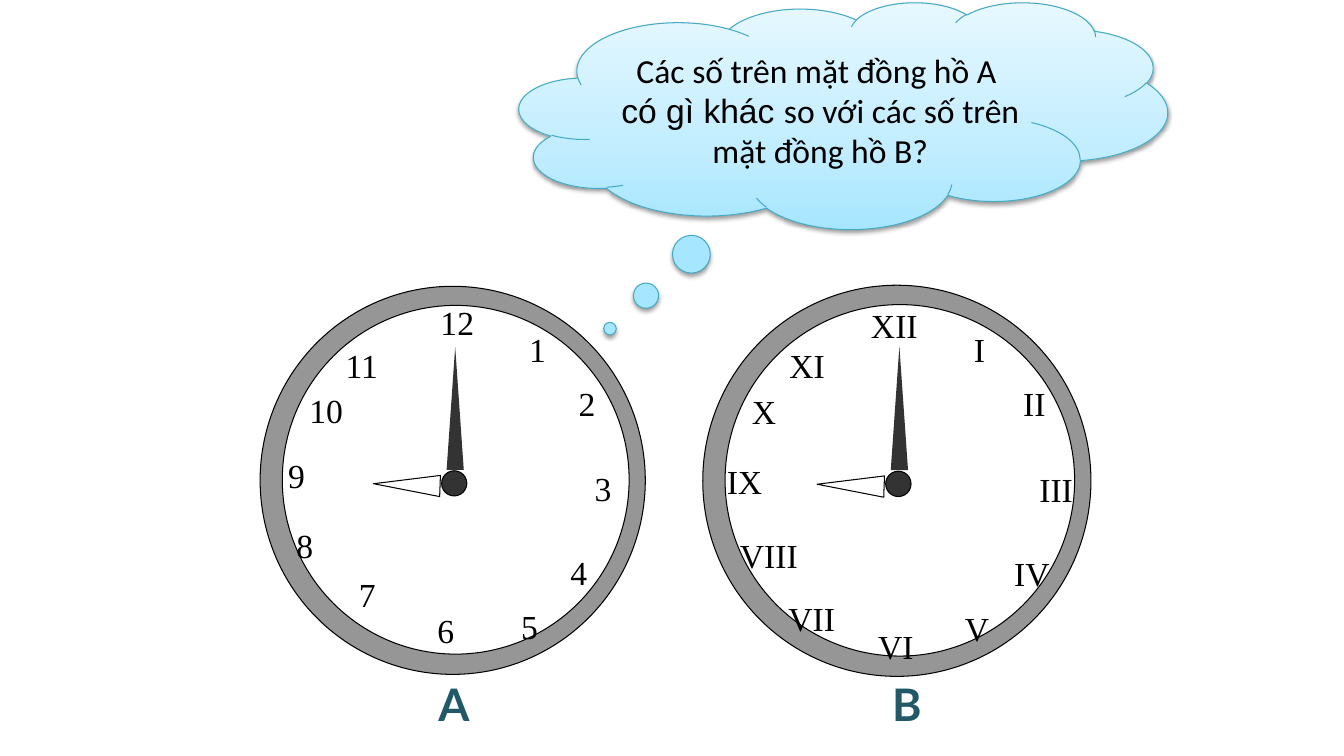
"""Build a slide comparing an Arabic-numeral clock with a Roman-numeral clock."""
from copy import deepcopy

from lxml import etree
from pptx import Presentation
from pptx.dml.color import RGBColor
from pptx.enum.shapes import MSO_SHAPE
from pptx.enum.text import MSO_ANCHOR, PP_ALIGN
from pptx.oxml.ns import qn
from pptx.util import Inches, Pt

OVAL, TRIANGLE, CLOUD = MSO_SHAPE.OVAL, MSO_SHAPE.ISOSCELES_TRIANGLE, MSO_SHAPE.CLOUD_CALLOUT
MIDDLE, CENTER = MSO_ANCHOR.MIDDLE, PP_ALIGN.CENTER

BLACK = RGBColor(0x00, 0x00, 0x00)
WHITE = RGBColor(0xFF, 0xFF, 0xFF)
RIM_GRAY = RGBColor(0x96, 0x96, 0x96)
HAND_GRAY = RGBColor(0x33, 0x33, 0x33)
LABEL_TEAL = RGBColor(0x21, 0x59, 0x68)
CLOUD_LINE = RGBColor(0x46, 0xAA, 0xC5)
CLOUD_STOPS = [
    (0, RGBColor(0xA7, 0xE6, 0xFF)),
    (0.35, RGBColor(0xC1, 0xED, 0xFF)),
    (1, RGBColor(0xE7, 0xF8, 0xFF)),
]

RIM_WIDTH = 3.82
CLOCK_PARTS = [
    (OVAL, 0, 0, RIM_WIDTH, 3.85, 0, RIM_GRAY, True),
    (OVAL, 0.22, 0.19, 3.44, 3.46, 0, WHITE, True),
    (OVAL, 1.8, 1.83, 0.25, 0.25, 270, HAND_GRAY, True),
    (TRIANGLE, 1.35, 1.64, 0.21, 0.66, 272, WHITE, True),
    (TRIANGLE, 1.85, 0.6, 0.17, 1.22, 0, HAND_GRAY, False),
]
CLOCKS = [
    (6.97, 2.83, 3.85, [
        ("XII", 8.54, 2.92), ("I", 9.56, 3.15), ("II", 10.05, 3.69), ("III", 10.21, 4.54),
        ("IV", 9.96, 5.38), ("V", 9.47, 5.92), ("VI", 8.61, 6.1), ("VII", 7.72, 5.82),
        ("VIII", 7.24, 5.2), ("IX", 7.11, 4.46), ("X", 7.36, 3.77), ("XI", 7.73, 3.31),
    ]),
    (2.58, 2.84, RIM_WIDTH, [
        ("12", 4.27, 2.89), ("1", 5.15, 3.15), ("2", 5.64, 3.69), ("3", 5.8, 4.53),
        ("4", 5.56, 5.37), ("5", 5.07, 5.9), ("6", 4.24, 5.94), ("7", 3.46, 5.58),
        ("8", 2.84, 5.1), ("9", 2.76, 4.4), ("10", 2.97, 3.76), ("11", 3.33, 3.31),
    ]),
]
SPACE_BEFORE = {1: 2, 2: 3}
NUMERAL_FORMAT = {"name": "Times New Roman", "size": Pt(24)}
LABEL_FORMAT = {"name": "Lato", "size": Pt(32), "bold": True}
QUESTION_START = "Các số trên mặt đồng hồ A "
QUESTION_REST = [
    ("có gì khác ", "Arial"),
    ("so với các số trên mặt đồng hồ B?", "Calibri"),
]


def add_span(para, text, color, font_format):
    span = para.add_run()
    span.text = text
    span.font.color.rgb = color
    for key, value in font_format.items():
        setattr(span.font, key, value)


def add_text(shapes, text, position, color, font_format):
    box = shapes.add_textbox(*[Inches(length) for length in position])
    box.text_frame.word_wrap = True
    para = box.text_frame.paragraphs[0]
    add_span(para, text, color, font_format)
    return para


deck = Presentation()
deck.slide_width, deck.slide_height = Inches(13.33), Inches(7.5)
page = deck.slides.add_slide(deck.slide_layouts[6])

for clock_left, clock_top, rim_width, numerals in CLOCKS:
    scale = rim_width / RIM_WIDTH
    clock = page.shapes.add_group_shape()
    for kind, left, top, width, height, rotation, color, outlined in CLOCK_PARTS:
        part = clock.shapes.add_shape(
            kind,
            Inches(clock_left + left * scale), Inches(clock_top + top * scale),
            Inches(width * scale), Inches(height * scale),
        )
        part.rotation = rotation
        part.shadow.inherit = False
        part.fill.solid()
        part.fill.fore_color.rgb = color
        if outlined:
            part.line.color.rgb = BLACK
            part.line.width = Pt(0.75)
        else:
            part.line.fill.background()
    for hour, (numeral, left, top) in enumerate(numerals):
        para = add_text(clock.shapes, numeral, (left, top, 1.45, 1.06), BLACK, NUMERAL_FORMAT)
        para.line_spacing = 1.15
        para.space_before = Pt(SPACE_BEFORE.get(hour, 0))
        para.space_after = Pt(10)

cloud = page.shapes.add_shape(CLOUD, Inches(5.15), Inches(0.02), Inches(6.43), Inches(2.25))
cloud.adjustments[0], cloud.adjustments[1] = -0.36, 0.94
cloud.line.color.rgb = CLOUD_LINE
cloud.line.width = Pt(0.75)
cloud.fill.gradient()
cloud.fill.gradient_angle = 90
stop_list = cloud._element.spPr.find(".//" + qn("a:gsLst"))
stop_list.append(deepcopy(stop_list[0]))
for stop, (position, color) in zip(cloud.fill.gradient_stops, CLOUD_STOPS):
    stop.position = position
    stop.color.rgb = color

cloud.shadow.inherit = False
effects = cloud._element.spPr.find(qn("a:effectLst"))
shadow = etree.SubElement(
    effects, qn("a:outerShdw"),
    blurRad=str(Pt(3.1)), dist=str(Pt(1.6)), dir="5400000", rotWithShape="0",
)
shadow_color = etree.SubElement(shadow, qn("a:srgbClr"), val=str(BLACK))
etree.SubElement(shadow_color, qn("a:alpha"), val="38000")

cloud.text_frame.word_wrap = True
cloud.text_frame.vertical_anchor = MIDDLE
question = cloud.text_frame.paragraphs[0]
question.alignment = CENTER
add_span(question, QUESTION_START, BLACK, {"name": "Calibri", "size": Pt(24)})
question.add_line_break()
for text, font_name in QUESTION_REST:
    add_span(question, text, BLACK, {"name": font_name, "size": Pt(24)})

for label, left in [("A", 4.25), ("B", 8.75)]:
    add_text(page.shapes, label, (left, 6.66, 0.67, 0.64), LABEL_TEAL, LABEL_FORMAT)

deck.save("out.pptx")
